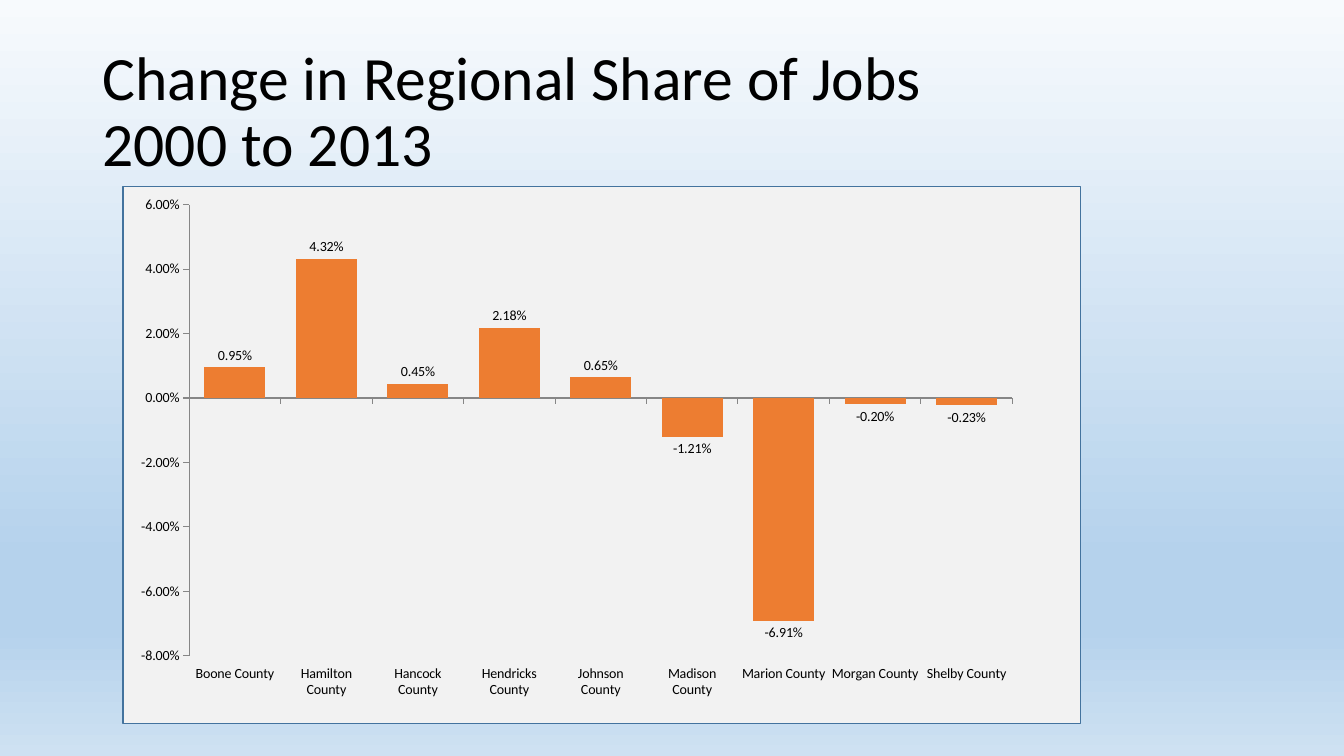
from lxml.etree import SubElement
from pptx import Presentation
from pptx.chart.data import CategoryChartData
from pptx.dml.color import RGBColor
from pptx.enum.chart import XL_CHART_TYPE, XL_LABEL_POSITION, XL_TICK_LABEL_POSITION, XL_TICK_MARK
from pptx.enum.shapes import MSO_SHAPE
from pptx.enum.text import MSO_ANCHOR
from pptx.oxml.ns import qn
from pptx.util import Inches, Pt

FONT = "Calibri"
BLACK = RGBColor(0, 0, 0)
PALE = RGBColor(0xF2, 0xF2, 0xF2)
BLUE = RGBColor(0x43, 0x73, 0x9E)
ORANGE = RGBColor(0xED, 0x7D, 0x31)
GREY = RGBColor(0x86, 0x86, 0x86)
SKY = [
    (0, RGBColor(0xF7, 0xFA, 0xFD)),
    (74, RGBColor(0xB5, 0xD2, 0xEC)),
    (83, RGBColor(0xB5, 0xD2, 0xEC)),
    (100, RGBColor(0xCE, 0xE1, 0xF2)),
]
TITLE = ["Change in Regional Share of Jobs", "2000 to 2013"]
SHARES = {
    "Boone": 0.0095,
    "Hamilton": 0.0432,
    "Hancock": 0.0045,
    "Hendricks": 0.0218,
    "Johnson": 0.0065,
    "Madison": -0.0121,
    "Marion": -0.0691,
    "Morgan": -0.002,
    "Shelby": -0.0023,
}


def paint_sky(slide):
    """Fill the background with a top-to-bottom gradient."""
    fill = slide.background.fill
    fill.gradient()
    fill.gradient_angle = 270
    stops = slide.element.find(".//" + qn("a:gsLst"))
    for old in list(stops):
        stops.remove(old)
    for share, color in SKY:
        stop = SubElement(stops, qn("a:gs"), pos=str(share * 1000))
        SubElement(stop, qn("a:srgbClr"), val=str(color))


def add_title(slide, box):
    """Set the two-line title in the box."""
    frame = slide.shapes.add_textbox(*box).text_frame
    frame.word_wrap = True
    frame.vertical_anchor = MSO_ANCHOR.MIDDLE
    para = frame.paragraphs[0]
    para.line_spacing = 0.9
    for row, text in enumerate(TITLE):
        if row:
            para.add_line_break()
        run = para.add_run()
        run.text = text
        run.font.name = FONT
        run.font.size = Pt(44)
        run.font.color.rgb = BLACK


def add_panel(slide, box):
    """Draw the pale panel behind the chart."""
    panel = slide.shapes.add_shape(MSO_SHAPE.RECTANGLE, *box)
    panel.shadow.inherit = False
    panel.fill.solid()
    panel.fill.fore_color.rgb = PALE
    panel.line.color.rgb = BLUE
    panel.line.width = Pt(1)


def style_axes(chart):
    """Style both axes and scale the values."""
    for axis in (chart.category_axis, chart.value_axis):
        axis.has_major_gridlines = False
        axis.major_tick_mark = XL_TICK_MARK.OUTSIDE
        axis.minor_tick_mark = XL_TICK_MARK.NONE
        axis.format.line.color.rgb = GREY
    chart.category_axis.tick_label_position = XL_TICK_LABEL_POSITION.LOW
    values = chart.value_axis
    values.minimum_scale, values.maximum_scale = -0.08, 0.06
    values.major_unit = 0.02
    values.tick_labels.number_format = "0.00%"
    values.tick_labels.number_format_is_linked = False


def add_bars(slide, box):
    """Chart the change in share by county."""
    data = CategoryChartData(number_format="0.00%")
    data.categories = [f"{name} County" for name in SHARES]
    data.add_series("Series 1", SHARES.values())
    chart = slide.shapes.add_chart(XL_CHART_TYPE.COLUMN_CLUSTERED, *box, data).chart
    chart.has_legend = False
    chart.has_title = False
    chart.font.name = FONT
    chart.font.size = Pt(10)
    chart.font.color.rgb = BLACK
    style_axes(chart)
    plot = chart.plots[0]
    plot.gap_width = 50
    plot.vary_by_categories = False
    bars = plot.series[0]
    bars.invert_if_negative = False
    bars.format.fill.solid()
    bars.format.fill.fore_color.rgb = ORANGE
    labels = bars.data_labels
    labels.show_value = True
    labels.number_format = "0.00%"
    labels.number_format_is_linked = False
    labels.position = XL_LABEL_POSITION.OUTSIDE_END


def main():
    """Build and save the slide."""
    deck = Presentation()
    deck.slide_width, deck.slide_height = Inches(13.33), Inches(7.5)
    slide = deck.slides.add_slide(deck.slide_layouts[6])
    left, top = Inches(1.22), Inches(1.85)
    paint_sky(slide)
    add_panel(slide, (left, top, Inches(9.5), Inches(5.33)))
    add_title(slide, (Inches(0.92), Inches(0.4), Inches(11.5), Inches(1.45)))
    add_bars(slide, (left, top, Inches(9), Inches(5.17)))
    deck.save("out.pptx")


if __name__ == "__main__":
    main()
